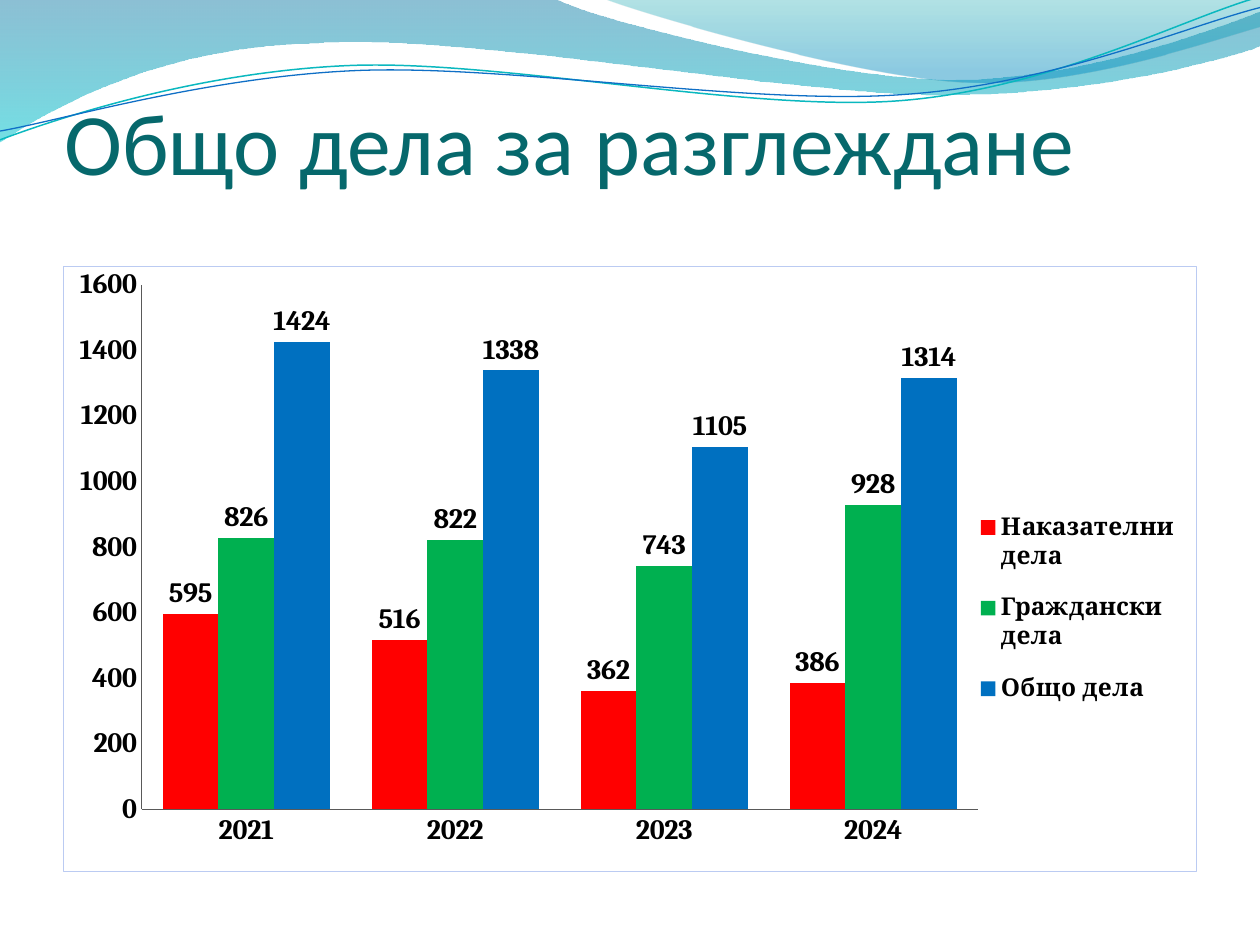
from math import cos, radians, sin

from lxml.etree import SubElement
from pptx import Presentation
from pptx.chart.data import CategoryChartData
from pptx.dml.color import RGBColor
from pptx.enum.chart import XL_CHART_TYPE as ChartType, XL_LABEL_POSITION as LabelPosition
from pptx.enum.chart import XL_LEGEND_POSITION as LegendPosition, XL_TICK_MARK as TickMark
from pptx.enum.text import MSO_ANCHOR as Anchor
from pptx.oxml import parse_xml
from pptx.oxml.ns import nsdecls, qn
from pptx.util import Inches, Pt

BACK_WAVE = [(0, 0), (4.4, -0.01), (4.76, 0.17, 6.64, 0.63, 7.58, 0.63),
             (8.53, 0.63, 9.58, 0.26, 10, 0.09), (10.01, 0.36),
             (9.83, 0.44, 8.7, 0.76, 7.46, 0.75), (6.22, 0.75, 3.82, 0.28, 2.57, 0.34),
             (1.29, 0.36, 0.46, 0.83, -0.01, 1.13), (0, 0)]
FRONT_WAVE = [(4.79, -0.01), (5.09, 0.11, 6.82, 0.62, 7.69, 0.65),
              (8.56, 0.69, 9.61, 0.32, 10, 0.21), (10, 0), (4.79, -0.01)]
TEAL_CURVE = [(0, 1.11), (0.48, 0.93, 1.58, 0.57, 2.77, 0.52),
              (3.95, 0.47, 5.93, 0.89, 7.13, 0.8), (8.33, 0.71, 9.38, 0.15, 9.98, -0.02)]
BLUE_CURVE = [(0, 1.04), (0.47, 0.96, 1.64, 0.61, 2.83, 0.56),
              (4.03, 0.51, 5.97, 0.84, 7.17, 0.75), (8.36, 0.67, 9.41, 0.21, 10, 0.06)]
CURVE_CENTER = (4.99, 0.58)
CURVE_TILT = -2.7
YEARS = ["2021", "2022", "2023", "2024"]
CASES = [("Наказателни дела", [595, 516, 362, 386], "FF0000"),
         ("Граждански дела", [826, 822, 743, 928], "00B050"),
         ("Общо дела", [1424, 1338, 1105, 1314], "0070C0")]


def rgb(value):
    """Turn a hex string into a colour."""
    return RGBColor.from_string(value)


def assign(target, values):
    """Set each named attribute on the target."""
    for name, value in values.items():
        setattr(target, name, value)


def level(x, y):
    """Turn a point of a tilted curve back to its untilted place."""
    angle = radians(-CURVE_TILT)
    dx, dy = x - CURVE_CENTER[0], y - CURVE_CENTER[1]
    return (CURVE_CENTER[0] + dx * cos(angle) - dy * sin(angle),
            CURVE_CENTER[1] + dx * sin(angle) + dy * cos(angle))


def place(parent, index, box, inner=False):
    """Give a chart part a fixed place as fractions of the chart."""
    for old in parent.findall(qn("c:layout")):
        parent.remove(old)
    layout = parse_xml(f"<c:layout {nsdecls('c')}><c:manualLayout/></c:layout>")
    values = [("layoutTarget", "inner")] if inner else []
    values += [("xMode", "edge"), ("yMode", "edge"), *zip("xywh", box)]
    for name, value in values:
        SubElement(layout[0], qn(f"c:{name}")).set("val", str(value))
    parent.insert(index, layout)


class Painter:
    """Holds the style and the current slide."""

    title_font = "Calibri"
    chart_font = "Cambria"

    def __init__(self, page):
        self.page = page

    def outline(self, segments, close, move=lambda x, y: (x, y)):
        """Add a freeform of straight lines and cubic curves."""
        points = [move(*segment[i:i + 2]) for segment in segments
                  for i in range(0, len(segment), 2)]
        points = [(Inches(x), Inches(y)) for x, y in points]
        builder = self.page.shapes.build_freeform(*points[0], scale=1.0)
        builder.add_line_segments(points[1:], close=close)
        shape = builder.convert_to_shape()
        shape.shadow.inherit = False
        lines = iter(list(shape.element.iter(qn("a:lnTo"))))
        for segment in segments[1:]:
            group = [next(lines) for _ in range(len(segment) // 2)]
            if len(group) == 3:
                bezier = parse_xml(f"<a:cubicBezTo {nsdecls('a')}/>")
                group[0].addprevious(bezier)
                for line in group:
                    bezier.append(line[0])
                    line.getparent().remove(line)
        return shape

    def wave(self, segments, stops):
        """Add a wave with a translucent vertical gradient."""
        shape = self.outline(segments, True)
        shape.line.fill.background()
        shape.fill.gradient()
        shape.fill.gradient_angle = 270
        for stop, (position, color, opacity) in zip(shape.fill.gradient_stops, stops):
            stop.position = position
            stop.color.rgb = rgb(color)
        colors = shape.element.spPr.iter(qn("a:srgbClr"))
        for node, (position, color, opacity) in zip(colors, stops):
            SubElement(node, qn("a:alpha")).set("val", str(opacity * 1000))

    def curve(self, segments, color, width):
        """Add an open, slightly tilted curved line."""
        shape = self.outline(segments, False, level)
        shape.rotation = CURVE_TILT
        shape.fill.background()
        shape.line.color.rgb = rgb(color)
        shape.line.width = Pt(width)

    def title(self, text, left, top, width, height):
        """Add the slide heading."""
        box = self.page.shapes.add_textbox(*map(Inches, (left, top, width, height)))
        frame = box.text_frame
        assign(frame, {"word_wrap": True, "vertical_anchor": Anchor.BOTTOM, "margin_left": 0,
                       "margin_right": 0, "margin_top": Inches(0.05), "margin_bottom": 0})
        span = frame.paragraphs[0].add_run()
        span.text = text
        self.style(span.font, 50, self.title_font, "06686C", False)

    def style(self, font, size, name, color="000000", bold=True):
        """Set the size, face, weight and colour of a font."""
        assign(font, {"size": Pt(size), "name": name, "bold": bold})
        font.color.rgb = rgb(color)

    def axis(self, axis):
        """Style a chart axis."""
        assign(axis, {"has_major_gridlines": False, "major_tick_mark": TickMark.NONE,
                      "minor_tick_mark": TickMark.NONE})
        axis.format.line.color.rgb = rgb("595959")
        axis.format.line.width = Pt(0.75)
        self.style(axis.tick_labels.font, 16, self.chart_font)

    def columns(self, left, top, width, height):
        """Add the clustered column chart of cases by year."""
        data = CategoryChartData()
        data.categories = YEARS
        for name, values, color in CASES:
            data.add_series(name, values)
        box = map(Inches, (left, top, width, height))
        chart = self.page.shapes.add_chart(ChartType.COLUMN_CLUSTERED, *box, data).chart
        assign(chart, {"has_title": False, "has_legend": True})
        self.style(chart.font, 10, self.chart_font, bold=False)
        self.axis(chart.category_axis)
        self.axis(chart.value_axis)
        assign(chart.value_axis, {"minimum_scale": 0, "maximum_scale": 1600, "major_unit": 200})
        plot = chart.plots[0]
        assign(plot, {"gap_width": 75, "overlap": 0, "vary_by_categories": False})
        for series, (name, values, color) in zip(plot.series, CASES):
            series.format.fill.solid()
            series.format.fill.fore_color.rgb = rgb(color)
            labels = series.data_labels
            assign(labels, {"show_value": True, "position": LabelPosition.OUTSIDE_END})
            self.style(labels.font, 16, self.chart_font)
        assign(chart.legend, {"position": LegendPosition.BOTTOM, "include_in_layout": False})
        self.style(chart.legend.font, 14, self.chart_font)
        space = chart.element
        place(space.find(".//" + qn("c:plotArea")), 0, (0.069, 0.03, 0.738, 0.868), inner=True)
        place(space.find(".//" + qn("c:legend")), 1, (0.8, 0.37, 0.19, 0.39))
        space.find(qn("c:chart")).addnext(parse_xml(
            f'<c:spPr {nsdecls("c", "a")}><a:noFill/><a:ln w="{Pt(0.75)}"><a:solidFill>'
            '<a:srgbClr val="BBCBF2"/></a:solidFill></a:ln></c:spPr>'))


def main():
    """Build and save the slide."""
    deck = Presentation()
    assign(deck, {"slide_width": Inches(10), "slide_height": Inches(7.5)})
    painter = Painter(deck.slides.add_slide(deck.slide_layouts[6]))
    painter.wave(BACK_WAVE, [(0, "0074A1", 45), (1, "00C6CF", 55)])
    painter.wave(FRONT_WAVE, [(0, "00A1A9", 30), (0.8, "008BBF", 45)])
    painter.curve(TEAL_CURVE, "0AB8BF", 0.85)
    painter.curve(BLUE_CURVE, "0F6FC6", 0.75)
    painter.title("Общо дела за разглеждане", 0.51, 0.52, 9, 1.01)
    painter.columns(0.5, 2.11, 9, 4.81)
    deck.save("out.pptx")


if __name__ == "__main__":
    main()
